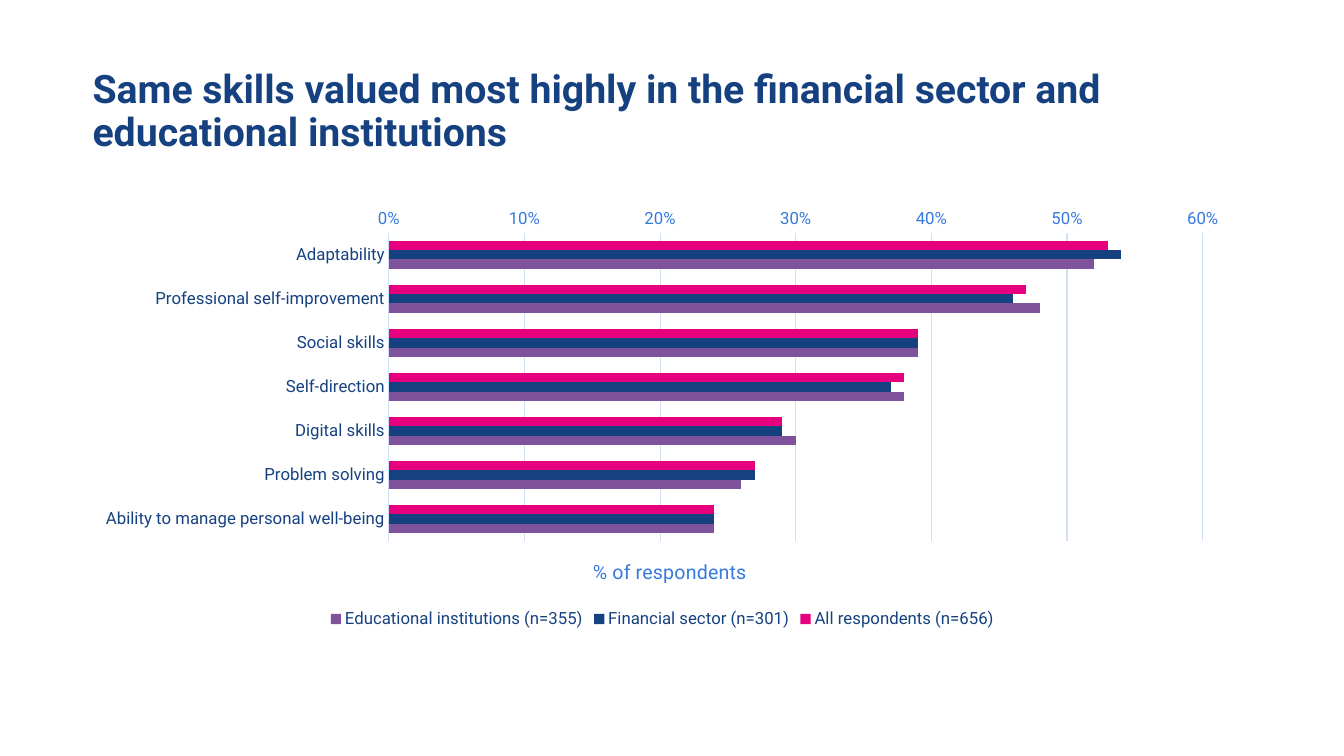
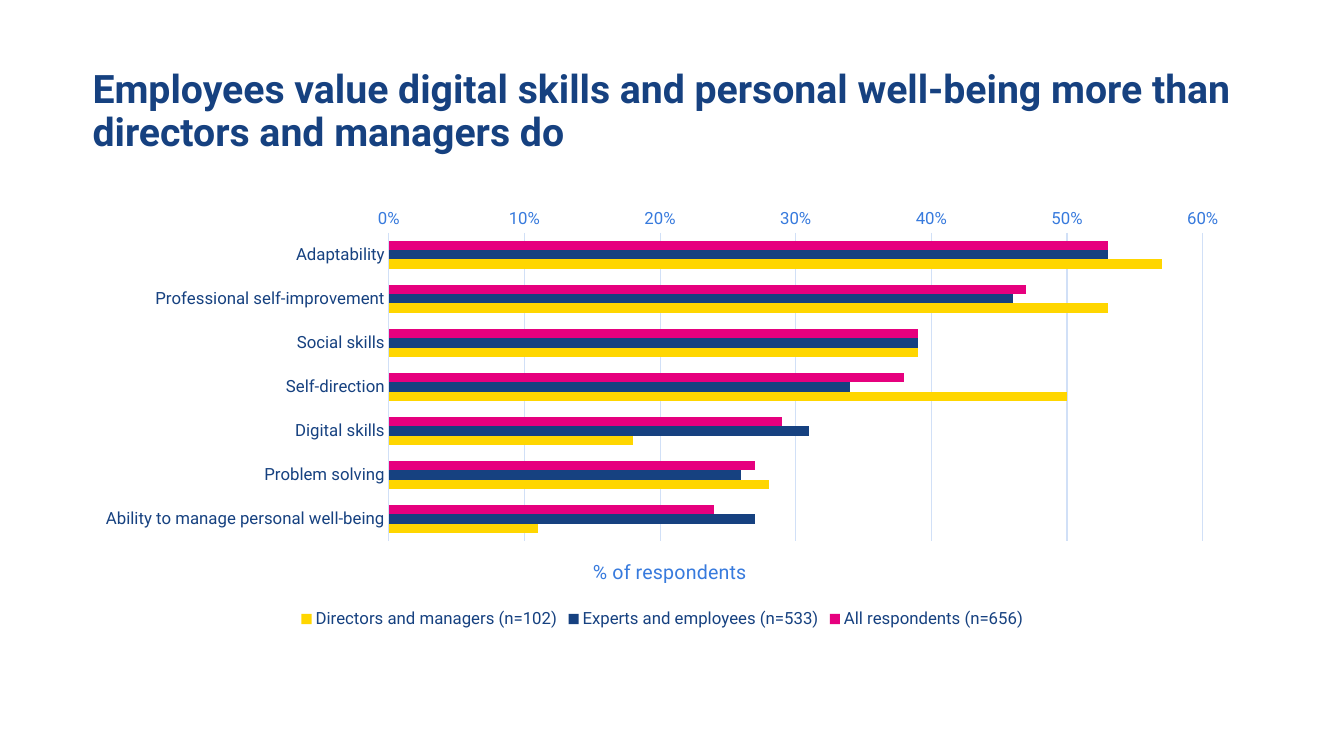
from lxml.etree import SubElement
from pptx import Presentation
from pptx.chart.data import CategoryChartData
from pptx.dml.color import RGBColor
from pptx.enum.chart import XL_CHART_TYPE, XL_LEGEND_POSITION, XL_TICK_MARK
from pptx.enum.text import MSO_ANCHOR
from pptx.oxml.ns import qn
from pptx.util import Inches, Pt

FONT = "Roboto"
NAVY, BLUE, PALE = "164180", "377ADD", "D1E0F7"
PINK, PURPLE, YELLOW = "E6007E", "7F539C", "FFD600"

# Left, top, width and height in inches
TITLE_BOX = (0.82, 0.39, 11.5, 1.45)
CHART_BOX = (0.82, 1.98, 11.5, 4.3)

SKILLS = [
    "Adaptability",
    "Professional self-improvement",
    "Social skills",
    "Self-direction",
    "Digital skills",
    "Problem solving",
    "Ability to manage personal well-being",
]
ALL_RESPONDENTS = ("All respondents (n=656)", PINK,
                   [0.53, 0.47, 0.39, 0.38, 0.29, 0.27, 0.24])

SLIDES = [
    ("Same skills valued most highly in the financial sector and educational institutions", [
        ALL_RESPONDENTS,
        ("Financial sector (n=301)", NAVY,
         [0.54, 0.46, 0.39, 0.37, 0.29, 0.27, 0.24]),
        ("Educational institutions (n=355)", PURPLE,
         [0.52, 0.48, 0.39, 0.38, 0.3, 0.26, 0.24]),
    ]),
    ("Employees value digital skills and personal well-being more than directors and managers do", [
        ALL_RESPONDENTS,
        ("Experts and employees (n=533)", NAVY,
         [0.53, 0.46, 0.39, 0.34, 0.31, 0.26, 0.27]),
        ("Directors and managers (n=102)", YELLOW,
         [0.57, 0.53, 0.39, 0.5, 0.18, 0.28, 0.11]),
    ]),
]


def color(hex_string):
    return RGBColor.from_string(hex_string)


def style_font(font, size, hex_string, bold=False):
    font.name = FONT
    font.size = Pt(size)
    font.bold = bold
    font.color.rgb = color(hex_string)


def style_line(line, hex_string):
    line.color.rgb = color(hex_string)
    line.width = Pt(0.75)


def set_layout(parent, index, **settings):
    """Fix a chart part's place, in shares of the chart's size."""
    for old in parent.findall(qn("c:layout")):
        parent.remove(old)
    layout = SubElement(parent, qn("c:layout"))
    parent.insert(index, layout)
    manual = SubElement(layout, qn("c:manualLayout"))
    for name, value in settings.items():
        SubElement(manual, qn(f"c:{name}")).set("val", str(value))


def add_title(page, box, text):
    frame = page.shapes.add_textbox(*map(Inches, box)).text_frame
    frame.word_wrap = True
    frame.vertical_anchor = MSO_ANCHOR.MIDDLE
    para = frame.paragraphs[0]
    para.text = text
    para.line_spacing = 0.9
    style_font(para.font, 28, NAVY, bold=True)


def style_category_axis(axis):
    axis.reverse_order = True
    axis.major_tick_mark = XL_TICK_MARK.NONE
    style_font(axis.tick_labels.font, 12, NAVY)
    style_line(axis.format.line, PALE)


def style_value_axis(axis):
    axis.minimum_scale, axis.maximum_scale, axis.major_unit = 0, 0.6, 0.1
    axis.major_tick_mark = XL_TICK_MARK.NONE
    axis.tick_labels.number_format = "0%"
    axis.tick_labels.number_format_is_linked = False
    style_font(axis.tick_labels.font, 12, BLUE)
    axis.format.line.fill.background()
    style_line(axis.major_gridlines.format.line, PALE)
    title = axis.axis_title
    para = title.text_frame.paragraphs[0]
    para.text = "% of respondents"
    style_font(para.font, 14, BLUE)
    set_layout(title._element, 1, xMode="edge", yMode="edge", x=0.437, y=0.82)


def add_skills_chart(page, box, groups):
    data = CategoryChartData(number_format="0%")
    data.categories = SKILLS
    for name, _, values in groups:
        data.add_series(name, values)
    chart = page.shapes.add_chart(
        XL_CHART_TYPE.BAR_CLUSTERED, *map(Inches, box), data).chart
    style_font(chart.font, 10, NAVY)
    chart.has_title = False
    style_category_axis(chart.category_axis)
    style_value_axis(chart.value_axis)

    plot = chart.plots[0]
    plot.gap_width = 182
    plot.vary_by_categories = False
    for series, (_, fill, _) in zip(plot.series, groups):
        series.format.fill.solid()
        series.format.fill.fore_color.rgb = color(fill)
    set_layout(chart._chartSpace.chart.plotArea, 0, layoutTarget="inner",
               xMode="edge", yMode="edge", x=0.264, y=0.077, w=0.702, h=0.711)

    chart.has_legend = True
    chart.legend.position = XL_LEGEND_POSITION.BOTTOM
    chart.legend.include_in_layout = False
    style_font(chart.legend.font, 12, NAVY)


def main():
    deck = Presentation()
    deck.slide_width, deck.slide_height = Inches(13.33), Inches(7.5)
    for title, groups in SLIDES:
        page = deck.slides.add_slide(deck.slide_layouts[6])
        add_title(page, TITLE_BOX, title)
        add_skills_chart(page, CHART_BOX, groups)
    deck.save("out.pptx")


if __name__ == "__main__":
    main()
